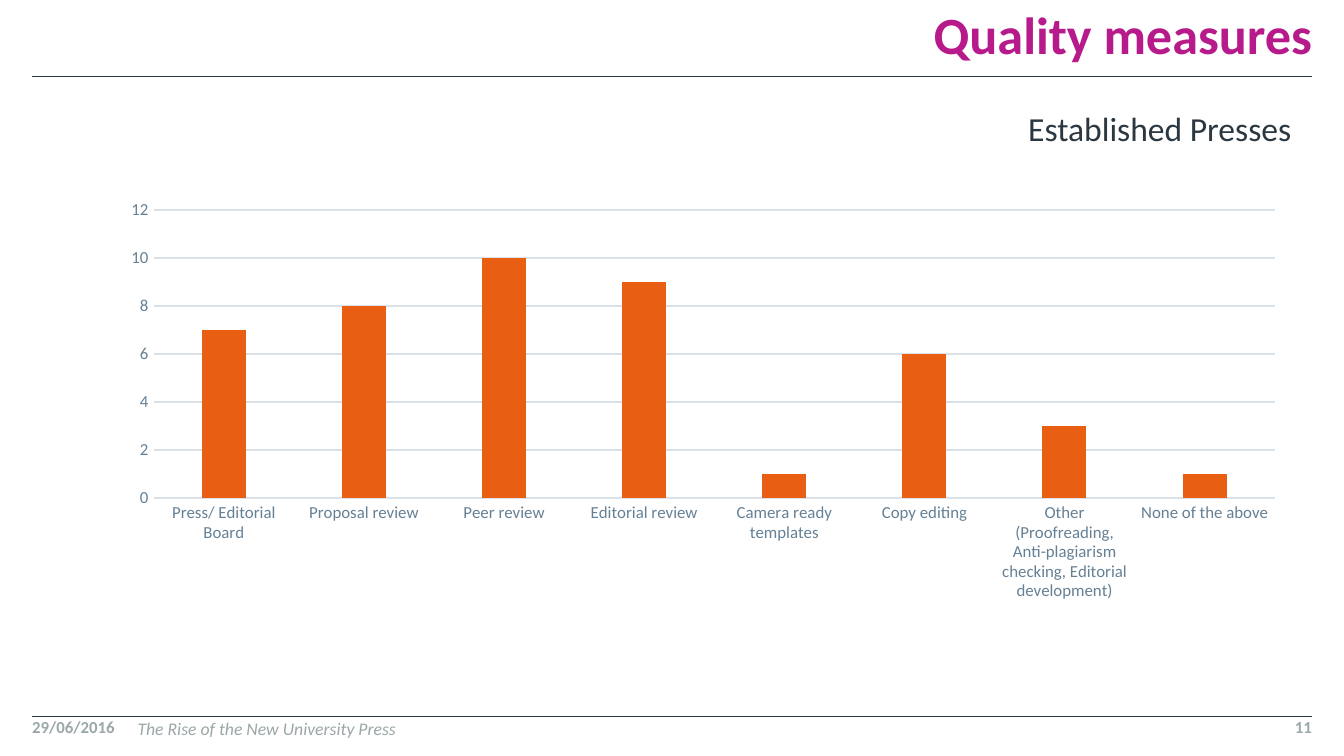
from pptx import Presentation
from pptx.chart.data import CategoryChartData
from pptx.dml.color import RGBColor
from pptx.enum.chart import XL_CHART_TYPE, XL_TICK_MARK
from pptx.enum.shapes import MSO_CONNECTOR
from pptx.enum.text import MSO_ANCHOR, PP_ALIGN
from pptx.oxml import parse_xml
from pptx.oxml.ns import nsdecls, qn
from pptx.util import Pt

COLUMN = XL_CHART_TYPE.COLUMN_CLUSTERED
NO_TICK = XL_TICK_MARK.NONE
STRAIGHT = MSO_CONNECTOR.STRAIGHT
TOP, MIDDLE, BOTTOM = MSO_ANCHOR.TOP, MSO_ANCHOR.MIDDLE, MSO_ANCHOR.BOTTOM
LEFT, RIGHT = PP_ALIGN.LEFT, PP_ALIGN.RIGHT

FONT = "Calibri"
INK = RGBColor(0x2C, 0x38, 0x41)
PINK = RGBColor(0xB7, 0x1A, 0x8B)
GRAY = RGBColor(0x9B, 0xA7, 0xA8)
SLATE = RGBColor(0x65, 0x80, 0x95)
PALE = RGBColor(0xDB, 0xE2, 0xE7)
ORANGE = RGBColor(0xE8, 0x5E, 0x12)

MARGIN = 17.2
WIDE = 720 - 2 * MARGIN

VALUES = {
    "Press/ Editorial Board": 7,
    "Proposal review": 8,
    "Peer review": 10,
    "Editorial review": 9,
    "Camera ready templates": 1,
    "Copy editing": 6,
    "Other (Proofreading, Anti-plagiarism checking, Editorial development)": 3,
    "None of the above": 1,
}


def set_font(font, size, color):
    """Set the typeface, size and colour of a font."""
    font.name = FONT
    font.size = Pt(size)
    font.color.rgb = color


def add_text(slide, box, text, size=9, color=GRAY, bold=False, italic=False,
             align=LEFT, anchor=TOP, inset=(0, 0, 0, 0), spacing=1.0):
    """Add a one-line text box."""
    frame = slide.shapes.add_textbox(*map(Pt, box)).text_frame
    frame.word_wrap = True
    frame.vertical_anchor = anchor
    (frame.margin_left, frame.margin_top,
     frame.margin_right, frame.margin_bottom) = map(Pt, inset)
    para = frame.paragraphs[0]
    para.alignment = align
    para.line_spacing = spacing
    run = para.add_run()
    run.text = text
    set_font(run.font, size, color)
    run.font.bold = bold
    run.font.italic = italic


def add_rule(slide, left, top, width):
    """Add a thin horizontal line."""
    rule = slide.shapes.add_connector(
        STRAIGHT, Pt(left), Pt(top), Pt(left + width), Pt(top))
    rule.line.color.rgb = INK
    rule.line.width = Pt(0.5)
    rule._element.spPr.append(parse_xml(f"<a:effectLst {nsdecls('a')}/>"))


def add_header(slide, left, top, width, height):
    """Place the title, its rule and the subtitle."""
    end = left + width
    add_rule(slide, left, top + height, width)
    add_text(slide, (end - 485, top, 485, 35.3), "Quality measures", size=28,
             color=PINK, bold=True, align=RIGHT, anchor=BOTTOM, spacing=0.9)
    add_text(slide, (end - 158, top + 55.8, 158, 27.2), "Established Presses",
             size=18, color=INK, anchor=MIDDLE, inset=(6, 3, 6, 3),
             spacing=0.99)


def set_plot(chart, x, y, w, h):
    """Fix the inner plot area as fractions of the chart."""
    area = chart.element.find(".//" + qn("c:plotArea"))
    for old in area.findall(qn("c:layout")):
        area.remove(old)
    parts = "".join(f'<c:{tag} val="{val}"/>' for tag, val in (
        ("layoutTarget", "inner"), ("xMode", "edge"), ("yMode", "edge"),
        ("x", x), ("y", y), ("w", w), ("h", h)))
    area.insert(0, parse_xml(
        f"<c:layout {nsdecls('c')}><c:manualLayout>{parts}"
        "</c:manualLayout></c:layout>"))


def add_columns(slide, left, top, width, height):
    """Place the column chart of quality measures."""
    data = CategoryChartData()
    data.categories = list(VALUES)
    data.add_series("Series 1", list(VALUES.values()))
    chart = slide.shapes.add_chart(
        COLUMN, Pt(left), Pt(top), Pt(width), Pt(height), data).chart
    chart.has_title = False
    chart.has_legend = False
    set_font(chart.font, 10, INK)
    set_plot(chart, 0.095, 0.144, 0.876, 0.509)

    plot = chart.plots[0]
    plot.vary_by_categories = False
    plot.gap_width = 219
    plot.overlap = -27
    fill = plot.series[0].format.fill
    fill.solid()
    fill.fore_color.rgb = ORANGE

    cats, vals = chart.category_axis, chart.value_axis
    for axis in (cats, vals):
        axis.major_tick_mark = axis.minor_tick_mark = NO_TICK
        set_font(axis.tick_labels.font, 9, SLATE)
    vals.minimum_scale, vals.maximum_scale, vals.major_unit = 0, 12, 2
    vals.format.line.fill.background()
    for line in (cats.format.line, vals.major_gridlines.format.line):
        line.color.rgb = PALE
        line.width = Pt(0.75)


def add_footer(slide, left, top, width, height):
    """Place the rule, date, talk name and page number."""
    side = 56.5
    add_rule(slide, left, top, width)
    add_text(slide, (left, top, side, height), "29/06/2016", bold=True)
    add_text(slide, (left + side, top, width - 2 * side, height),
             "The Rise of the New University Press", size=9.5, italic=True,
             inset=(0, 0.7, 0, 0))
    add_text(slide, (left + width - side, top, side, height), "11",
             bold=True, align=RIGHT)


def main():
    """Build and save the slide."""
    deck = Presentation()
    deck.slide_width, deck.slide_height = Pt(720), Pt(405)
    slide = deck.slides.add_slide(deck.slide_layouts[6])
    add_header(slide, MARGIN, 0, WIDE, 41)
    add_columns(slide, MARGIN, 69, WIDE, 303)
    add_footer(slide, MARGIN, 383.8, WIDE, 13)
    deck.save("out.pptx")


if __name__ == "__main__":
    main()
